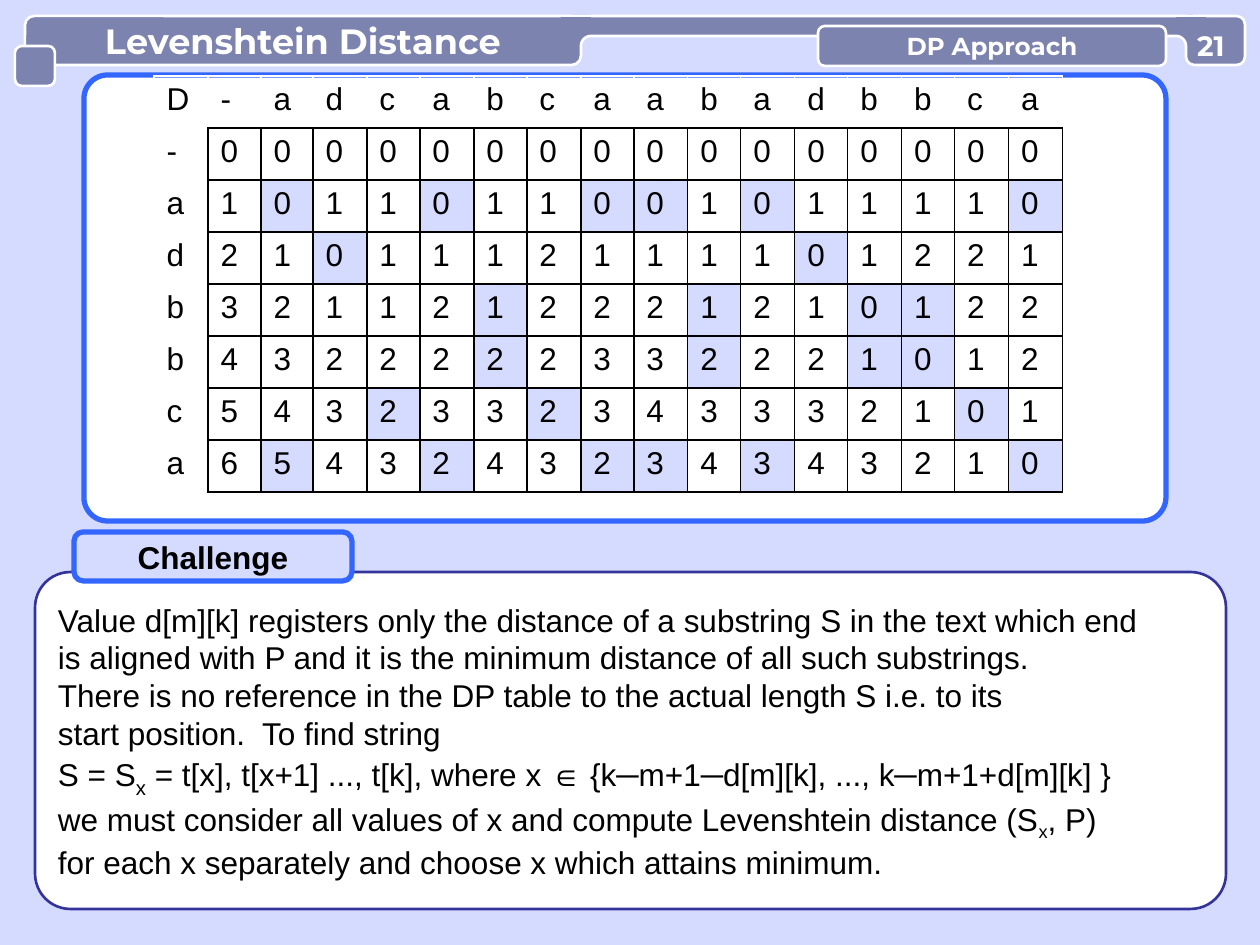
from dataclasses import dataclass
from math import cos, pi, sin

from lxml.etree import SubElement
from pptx import Presentation
from pptx.dml.color import RGBColor as RGB
from pptx.enum.shapes import MSO_CONNECTOR as CONN, MSO_SHAPE as SHAPE
from pptx.enum.text import MSO_ANCHOR as ANCHOR, MSO_AUTO_SIZE as AUTO, PP_ALIGN as ALIGN
from pptx.oxml import parse_xml
from pptx.oxml.ns import nsdecls, qn
from pptx.util import Emu, Pt

SCALE = 914400 / 126
COLORS = {
    "pale": "D5DAFF", "slate": "7D83AF", "white": "FFFFFF",
    "blue": "3366FF", "navy": "333399", "black": "000000",
}
HEADING = {"name": "Montserrat", "bold": True}
BODY = {"name": "Arial", "size": Pt(18), "bold": False}
FRAME = {
    "word_wrap": True, "auto_size": AUTO.NONE, "vertical_anchor": ANCHOR.MIDDLE,
    "margin_left": 0, "margin_right": 0, "margin_top": 0, "margin_bottom": 0,
}
HEADER = "-adcabcaabadbbca"
ROWS = [
    ("-", "0000000000000000"),
    ("a", "1011011001011110"),
    ("d", "2101112111101221"),
    ("b", "3211212221210122"),
    ("b", "4322222332221012"),
    ("c", "5432332343332101"),
    ("a", "6543243234343210"),
]
COLUMNS = [54, 53, 52] + [54, 53] * 6 + [54, 54]
ROW_HEIGHT = 52
EXPLANATION = [
    [("Value d[m][k] registers only the distance of a substring S in the text which end", {})],
    [("is aligned with P and it is the minimum distance of all such substrings.", {})],
    [("There is no reference in the DP table to the actual length S i.e. to its", {})],
    [("start position.  To find string", {})],
    [("S = S", {}), ("x", {"size": Pt(20), "sub": True}),
     (" = t[x], t[x+1] ..., t[k], where x ∈ {k─m+1─d[m][k], ..., k─m+1+d[m][k] }", {})],
    [("we must consider all values of x and compute Levenshtein distance (S", {}),
     ("x", {"sub": True}), (", P)", {})],
    [("for each x separately and choose x which attains minimum.", {})],
]


@dataclass(frozen=True)
class Box:
    x: int
    y: int
    w: int
    h: int

    def emu(self) -> list[Emu]:
        return [px(v) for v in (self.x, self.y, self.w, self.h)]


@dataclass(frozen=True)
class Panel:
    box: Box
    adj: float
    fill: str = "slate"
    line: str = "white"
    weight: float = 1.5


@dataclass(frozen=True)
class Joint:
    x: int
    corner_x: int
    y: int
    direction: int


MATRIX_PANEL = Panel(Box(84, 75, 1082, 446), 0.053, "white", "blue", 3)
TITLE_BAR = Panel(Box(25, 16, 556, 49), 0.188)
STRIP = Panel(Box(581, 16, 615, 20), 0.5)
SQUARE = Panel(Box(15, 46, 40, 40), 0.17)
PAGE_BOX = Panel(Box(1186, 16, 59, 49), 0.17)
TOPIC_BAR = Panel(Box(818, 26, 348, 40), 0.17)
TEXT_PANEL = Panel(Box(35, 572, 1191, 337), 0.105, "white", "navy")
CHALLENGE = Panel(Box(74, 532, 278, 49), 0.188, "pale", "blue", 3)
LEFT_JOINT = Joint(561, 591, 46, -1)
RIGHT_JOINT = Joint(1176, 1176, 46, 1)


def px(v: float) -> Emu:
    return Emu(round(v * SCALE))


def rgb(name: str) -> RGB:
    return RGB.from_string(COLORS[name])


def add_run(p, text: str, color: str, fmt: dict) -> None:
    r = p.add_run()
    r.text = text
    r.font.color.rgb = rgb(color)
    for key, value in fmt.items():
        if key == "sub":
            r.font._element.set("baseline", "-25000")
        else:
            setattr(r.font, key, value)


def set_frame(tf) -> None:
    for key, value in FRAME.items():
        setattr(tf, key, value)


def write(sp, text: str, color: str, fmt: dict, align=ALIGN.CENTER) -> None:
    set_frame(sp.text_frame)
    p = sp.text_frame.paragraphs[0]
    p.alignment = align
    add_run(p, text, color, fmt)


def place(s, sp, box: Box) -> None:
    sp.left, sp.top, sp.width, sp.height = box.emu()
    s.shapes._spTree.append(sp._element)


def add_panel(s, panel: Panel):
    sp = s.shapes.add_shape(SHAPE.ROUNDED_RECTANGLE, *panel.box.emu())
    sp.adjustments[0] = panel.adj
    sp.shadow.inherit = False
    sp.fill.solid()
    sp.fill.fore_color.rgb = rgb(panel.fill)
    sp.line.color.rgb = rgb(panel.line)
    sp.line.width = Pt(panel.weight)
    return sp


def add_outline(s, points: list[tuple[float, float]], closed: bool):
    pts = [(px(x), px(y)) for x, y in points]
    fb = s.shapes.build_freeform(*pts[0])
    fb.add_line_segments(pts[1:], close=closed)
    sp = fb.convert_to_shape()
    sp.shadow.inherit = False
    return sp


def add_joint(s, joint: Joint) -> None:
    sp = s.shapes.add_shape(SHAPE.RECTANGLE, *Box(joint.x, 16, 30, 30).emu())
    sp.shadow.inherit = False
    sp.fill.solid()
    sp.fill.fore_color.rgb = rgb("slate")
    sp.line.fill.background()
    edge = s.shapes.add_connector(CONN.STRAIGHT, px(joint.x), px(16), px(joint.x + 30), px(16))
    edge.line.color.rgb = rgb("white")
    edge.line.width = Pt(1.5)
    SubElement(edge._element.spPr, qn("a:effectLst"))
    arc = [(joint.corner_x + joint.direction * 10 * sin(i * pi / 16),
            joint.y - 10 * cos(i * pi / 16)) for i in range(9)]
    cutout = add_outline(s, arc + [(joint.corner_x, joint.y)], True)
    cutout.fill.solid()
    cutout.fill.fore_color.rgb = rgb("pale")
    cutout.line.fill.background()
    curve = add_outline(s, arc, False)
    curve.fill.background()
    curve.line.color.rgb = rgb("white")
    curve.line.width = Pt(1.5)


def set_borders(cell, sides: str) -> None:
    tcPr = cell._tc.get_or_add_tcPr()
    for i, side in enumerate(sides):
        tcPr.insert(i, parse_xml(
            f'<a:ln{side} {nsdecls("a")} w="12700"><a:solidFill>'
            f'<a:srgbClr val="{COLORS["black"]}"/></a:solidFill></a:ln{side}>'))


def add_matrix(s) -> None:
    lines = ["D" + HEADER] + [label + values for label, values in ROWS]
    box = Box(154, 76, sum(COLUMNS), ROW_HEIGHT * len(lines))
    tbl = s.shapes.add_table(len(lines), len(COLUMNS), *box.emu()).table
    tbl.first_row = tbl.horz_banding = False
    for col, width in zip(tbl.columns, COLUMNS):
        col.width = px(width)
    for i, line in enumerate(lines):
        tbl.rows[i].height = px(ROW_HEIGHT)
        for j, text in enumerate(line):
            cell = tbl.cell(i, j)
            add_run(cell.text_frame.paragraphs[0], text, "black", BODY)
            if i > 1 and j > 1 and line[0] == lines[0][j]:
                cell.fill.solid()
                cell.fill.fore_color.rgb = rgb("pale")
            else:
                cell.fill.background()
            set_borders(cell, "LRTB" if i and j else "B" if j else "R" if i else "")


def add_explanation(s, sp) -> None:
    place(s, sp, Box(58, 572, 1150, 337))
    tf = sp.text_frame
    set_frame(tf)
    for i, runs in enumerate(EXPLANATION):
        p = tf.add_paragraph() if i else tf.paragraphs[0]
        p.space_before = Pt(0)
        pPr = p._p.get_or_add_pPr()
        pPr.set("marL", "0")
        pPr.set("indent", "0")
        SubElement(pPr, qn("a:buNone"))
        for text, fmt in runs:
            add_run(p, text, "black", BODY | fmt)


def main() -> None:
    prs = Presentation()
    prs.slide_width, prs.slide_height = px(1260), px(945)
    s = prs.slides.add_slide(prs.slide_layouts[1])
    title, body = s.placeholders
    s.background.fill.solid()
    s.background.fill.fore_color.rgb = rgb("pale")

    add_panel(s, MATRIX_PANEL)
    add_matrix(s)
    add_panel(s, TITLE_BAR)
    add_panel(s, STRIP)
    add_joint(s, LEFT_JOINT)
    place(s, title, TITLE_BAR.box)
    write(title, "Levenshtein Distance", "white", HEADING | {"size": Pt(20)})
    add_panel(s, SQUARE)
    add_panel(s, PAGE_BOX)
    add_joint(s, RIGHT_JOINT)
    write(add_panel(s, TOPIC_BAR), "DP Approach", "white", HEADING | {"size": Pt(14)})
    number = s.shapes.add_textbox(*Box(1186, 28, 50, 34).emu())
    write(number, "21", "white", HEADING | {"size": Pt(16)}, ALIGN.CENTER)
    add_panel(s, TEXT_PANEL)
    add_explanation(s, body)
    write(add_panel(s, CHALLENGE), "Challenge", "black", BODY | {"bold": True})
    prs.save("out.pptx")


if __name__ == "__main__":
    main()
